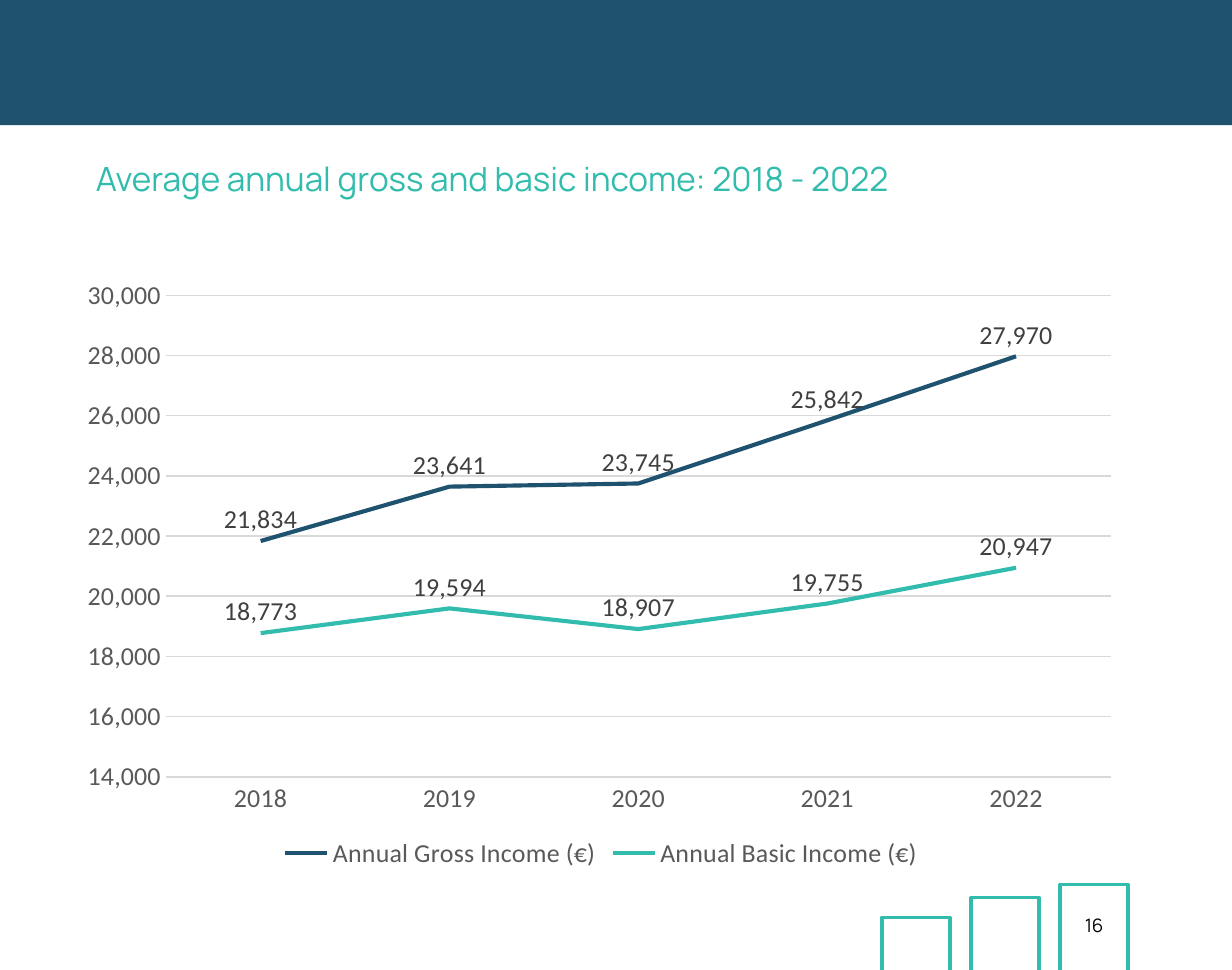
from lxml import etree
from pptx import Presentation
from pptx.chart.data import CategoryChartData
from pptx.dml.color import RGBColor
from pptx.enum.chart import XL_CHART_TYPE, XL_LABEL_POSITION, XL_LEGEND_POSITION, XL_MARKER_STYLE, XL_TICK_MARK
from pptx.enum.shapes import MSO_SHAPE
from pptx.enum.text import MSO_ANCHOR, MSO_AUTO_SIZE, PP_ALIGN
from pptx.oxml.ns import qn
from pptx.util import Cm, Pt

LINE = XL_CHART_TYPE.LINE
ABOVE = XL_LABEL_POSITION.ABOVE
BOTTOM = XL_LEGEND_POSITION.BOTTOM
BARE = XL_MARKER_STYLE.NONE
NO_TICK = XL_TICK_MARK.NONE
RECT = MSO_SHAPE.RECTANGLE
TOP = MSO_ANCHOR.TOP
FIXED = MSO_AUTO_SIZE.NONE
LEFT, CENTER = PP_ALIGN.LEFT, PP_ALIGN.CENTER

COLORS = {"navy": "1E526E", "teal": "32BCAD", "black": "000000",
          "gray": "595959", "dark": "404040", "grid": "D9D9D9"}
YEARS = ["2018", "2019", "2020", "2021", "2022"]
INCOME = [
    ("Annual Gross Income (€)", "navy", [21834, 23641, 23745, 25842, 27970]),
    ("Annual Basic Income (€)", "teal", [18773, 19594, 18907, 19755, 20947]),
]
PLOT = {"layoutTarget": "inner", "xMode": "edge", "yMode": "edge",
        "x": 0.09, "y": 0.05, "w": 0.89, "h": 0.79}


def color(name):
    return RGBColor.from_string(COLORS[name])


class Page:
    face = "Manrope"
    chart_face = "Calibri"

    def __init__(self, deck):
        self.slide = deck.slides.add_slide(deck.slide_layouts[5])

    def font(self, font, face, size, tint):
        font.name, font.size = face, Pt(size)
        font.color.rgb = color(tint)

    def stroke(self, line, tint, width):
        line.color.rgb = color(tint)
        line.width = Pt(width)

    def rect(self, box, fill=None, edge=None):
        shape = self.slide.shapes.add_shape(RECT, *map(Cm, box))
        shape.shadow.inherit = False
        if fill:
            shape.fill.solid()
            shape.fill.fore_color.rgb = color(fill)
        else:
            shape.fill.background()
        if edge:
            self.stroke(shape.line, edge, 2)
        else:
            shape.line.fill.background()

    def label(self, shape, words, size, tint, align):
        frame = shape.text_frame
        frame.word_wrap = True
        frame.auto_size = FIXED
        frame.vertical_anchor = TOP
        frame.margin_left = frame.margin_right = 0
        frame.margin_top = frame.margin_bottom = 0
        para = frame.paragraphs[0]
        para.alignment = align
        run = para.add_run()
        run.text = words
        self.font(run.font, self.face, size, tint)
        return para

    def title(self, words, box):
        shape = self.slide.shapes.title
        shape.left, shape.top, shape.width, shape.height = map(Cm, box)
        self.label(shape, words, 18, "teal", LEFT)

    def number(self, words, box):
        shape = self.slide.shapes.add_textbox(*map(Cm, box))
        para = self.label(shape, words, 10, "black", CENTER)
        para.line_spacing = Pt(14.2)

    def chart(self, box):
        data = CategoryChartData(number_format="#,##0")
        data.categories = YEARS
        for name, tint, values in INCOME:
            data.add_series(name, values)
        chart = self.slide.shapes.add_chart(LINE, *map(Cm, box), data).chart
        chart.has_title = False
        self.font(chart.font, self.chart_face, 14, "black")
        chart.has_legend = True
        chart.legend.position = BOTTOM
        chart.legend.include_in_layout = False
        self.font(chart.legend.font, self.chart_face, 14, "gray")
        self.axes(chart)
        chart.plots[0].vary_by_categories = False
        for series, (name, tint, values) in zip(chart.plots[0].series, INCOME):
            self.series(series, tint)
        self.layout(chart)

    def axes(self, chart):
        years, money = chart.category_axis, chart.value_axis
        for axis in (years, money):
            axis.major_tick_mark = axis.minor_tick_mark = NO_TICK
            self.font(axis.tick_labels.font, self.chart_face, 14, "gray")
        self.stroke(years.format.line, "grid", 0.75)
        money.format.line.fill.background()
        money.minimum_scale, money.maximum_scale = 14000, 30000
        money.major_unit = 2000
        money.tick_labels.number_format = "#,##0"
        money.tick_labels.number_format_is_linked = False
        self.stroke(money.major_gridlines.format.line, "grid", 0.75)

    def series(self, series, tint):
        series.smooth = False
        series.marker.style = BARE
        self.stroke(series.format.line, tint, 2.25)
        labels = series.data_labels
        labels.show_value = True
        labels.position = ABOVE
        self.font(labels.font, self.chart_face, 14, "dark")

    def layout(self, chart):
        area = chart.element.find(".//" + qn("c:plotArea"))
        for old in area.findall(qn("c:layout")):
            area.remove(old)
        layout = etree.Element(qn("c:layout"))
        manual = etree.SubElement(layout, qn("c:manualLayout"))
        for key, value in PLOT.items():
            etree.SubElement(manual, qn("c:" + key)).set("val", str(value))
        area.insert(0, layout)


def main():
    deck = Presentation()
    deck.slide_width, deck.slide_height = Cm(23.5), Cm(18.5)
    page = Page(deck)
    page.rect((-0.43, -0.28, 24.46, 2.67), fill="navy")
    for step, top in enumerate((17.5, 17.12, 16.87)):
        page.rect((16.82 + 1.7 * step, top, 1.3, 2.06), edge="teal")
    page.number("16", (20.22, 17.35, 1.3, 0.5))
    page.title("Average annual gross and basic income: 2018 - 2022",
               (1.83, 3.02, 18.4, 0.76))
    page.chart((1.35, 5.05, 20.24, 11.63))
    deck.save("out.pptx")


if __name__ == "__main__":
    main()
